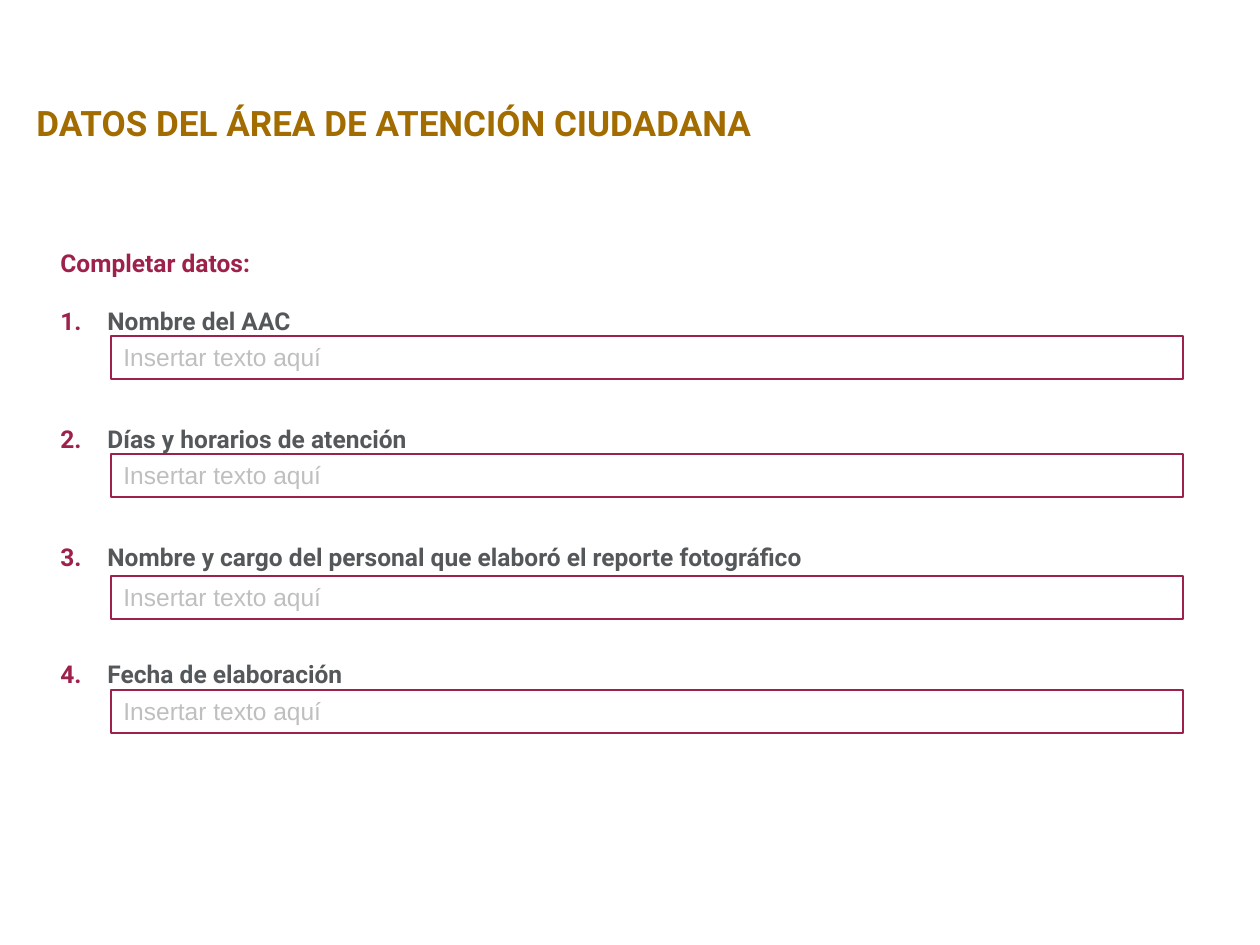
from lxml.etree import SubElement
from pptx import Presentation
from pptx.dml.color import RGBColor
from pptx.enum.shapes import MSO_SHAPE as Shape
from pptx.enum.text import MSO_ANCHOR as Anchor, MSO_AUTO_SIZE as Auto, PP_ALIGN as Align
from pptx.oxml.ns import qn
from pptx.util import Emu, Pt

GOLD = RGBColor(0xA2, 0x6C, 0x00)
WINE = RGBColor(0x9D, 0x21, 0x48)
GRAY = RGBColor(0x55, 0x58, 0x5A)
PALE = RGBColor(0xBF, 0xBF, 0xBF)

HINT = "Insertar texto aquí"
FIELDS = [
    ("Nombre del AAC", 336),
    ("Días y horarios de atención", 454),
    ("Nombre y cargo del personal que elaboró el reporte fotográfico", 576),
    ("Fecha de elaboración", 690),
]


def px(n):
    return Emu(round(n * 914400 / 126))


class Form:
    head, body = "Roboto", "Arial"
    size, line = 14, 0.75
    indent, gap = 47, 33.6

    def __init__(self, slide):
        self.slide = slide

    def style(self, para, font, size, color, bold=False):
        for run in para.runs:
            run.font.name = font
            run.font.size = Pt(size)
            run.font.bold = bold
            run.font.color.rgb = color

    def text(self, x, y, w, h):
        frame = self.slide.shapes.add_textbox(px(x), px(y), px(w), px(h)).text_frame
        frame.word_wrap = True
        frame.auto_size = Auto.SHAPE_TO_FIT_TEXT
        return frame

    def title(self, text, *place):
        frame = self.text(*place)
        frame.text = text
        self.style(frame.paragraphs[0], self.head, 20, GOLD, True)

    def number(self, para):
        """Give the paragraph a coloured automatic number."""
        props = para._p.get_or_add_pPr()
        props.set("marL", str(px(self.indent)))
        props.set("indent", str(-px(self.indent)))
        tint = SubElement(props, qn("a:buClr"))
        SubElement(tint, qn("a:srgbClr"), val=str(WINE))
        SubElement(props, qn("a:buFont"), typeface="+mj-lt")
        SubElement(props, qn("a:buAutoNum"), type="arabicPeriod")

    def list(self, intro, items, *place):
        frame = self.text(*place)
        frame.text = "\n".join([intro, *items])
        for i, para in enumerate(frame.paragraphs):
            para.line_spacing = 2.0
            if i > 1:
                para.space_before = Pt(self.gap)
            if i:
                self.number(para)
            self.style(para, self.head, self.size, GRAY if i else WINE, True)

    def field(self, text, x, y, w, h):
        box = self.slide.shapes.add_shape(Shape.RECTANGLE, px(x), px(y), px(w), px(h))
        box.shadow.inherit = False
        box.fill.background()
        box.line.color.rgb = WINE
        box.line.width = Pt(self.line)
        frame = box.text_frame
        frame.word_wrap = True
        frame.auto_size = Auto.SHAPE_TO_FIT_TEXT
        frame.vertical_anchor = Anchor.TOP
        frame.text = text
        para = frame.paragraphs[0]
        para.alignment = Align.LEFT
        self.style(para, self.body, self.size, PALE)


def main():
    deck = Presentation()
    deck.slide_width, deck.slide_height = px(1260), px(945)
    form = Form(deck.slides.add_slide(deck.slide_layouts[6]))
    form.title("DATOS DEL ÁREA DE ATENCIÓN CIUDADANA", 24, 95, 770, 55)
    form.list("Completar datos:", [name for name, _ in FIELDS], 48, 212, 1164, 488)
    for _, top in FIELDS:
        form.field(HINT, 111, top, 1072, 43)
    deck.save("out.pptx")


if __name__ == "__main__":
    main()
